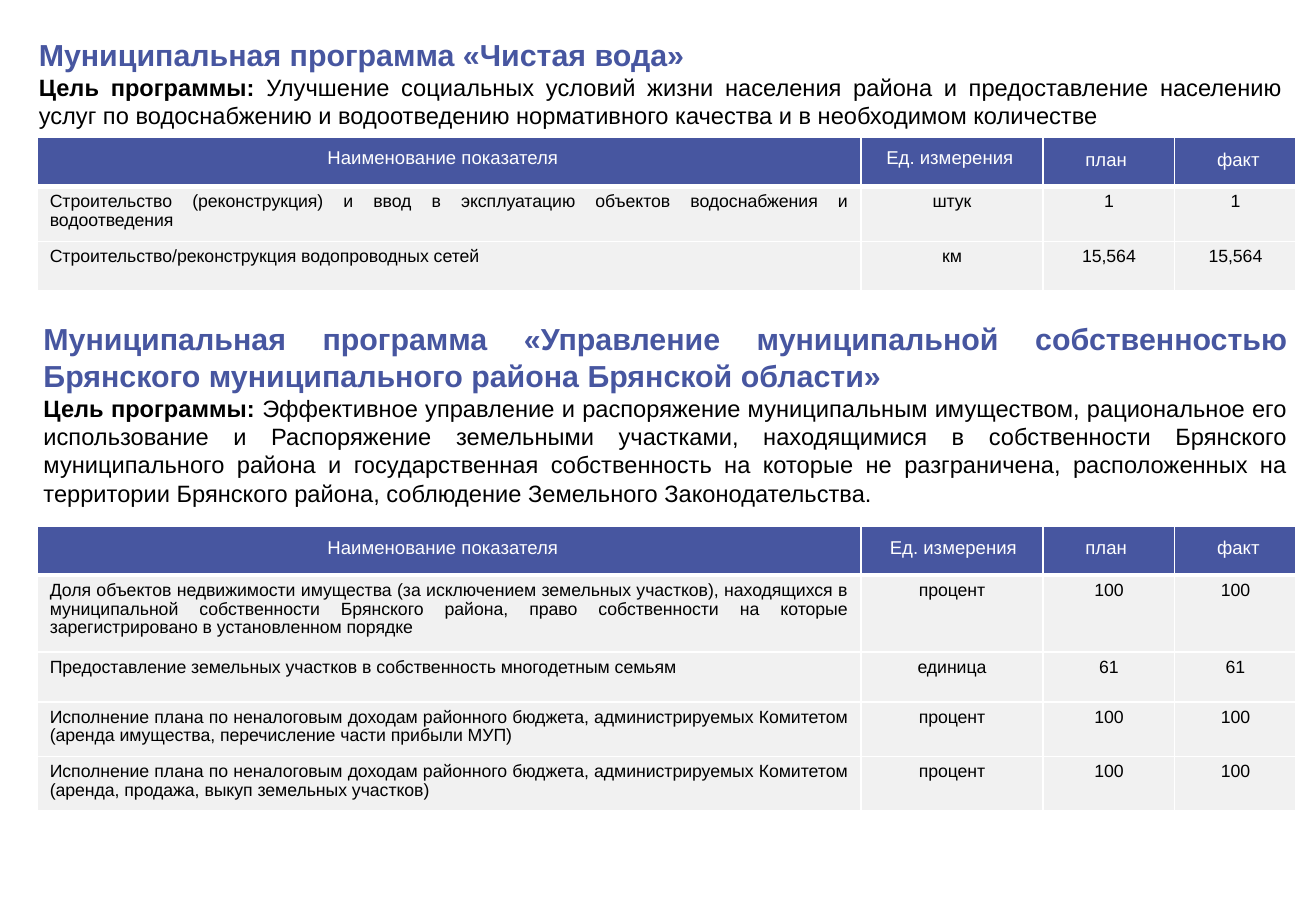
from lxml import etree
from pptx import Presentation
from pptx.dml.color import RGBColor
from pptx.enum.text import MSO_ANCHOR, MSO_AUTO_SIZE, PP_ALIGN
from pptx.oxml.ns import qn
from pptx.util import Pt

JUSTIFY, CENTER = PP_ALIGN.JUSTIFY, PP_ALIGN.CENTER
TOP = MSO_ANCHOR.TOP
NO_AUTOFIT = MSO_AUTO_SIZE.NONE

FONT = "Arial"
COLORS = {"accent": "4756A0", "row": "F1F1F1", "text": "000000", "white": "FFFFFF"}

GOAL_LABEL = "Цель программы: "
# Indicator rows: name, unit, plan, fact, row height.
# Heading labels: text, left, top offset from the table, width.
PROGRAMS = [
    {
        "title": "Муниципальная программа «Чистая вода»",
        "goal": "Улучшение социальных условий жизни населения района и предоставление "
                "населению услуг по водоснабжению и водоотведению нормативного качества "
                "и в необходимом количестве",
        "intro_box": (15.8, 18, 751.7, 63.4),
        "table_top": 81.4,
        "headings": [
            ("Наименование показателя", 185.8, 1.4, 153.4),
            ("Ед. измерения", 517.7, 1.4, 90.7),
            ("план", 635.8, 2.9, 39.6),
            ("факт", 714.2, 2.9, 39.6),
        ],
        "indicators": [
            ("Строительство (реконструкция) и ввод в эксплуатацию объектов "
             "водоснабжения и водоотведения", "штук", "1", "1", 32.4),
            ("Строительство/реконструкция водопроводных сетей",
             "км", "15,564", "15,564", 29.5),
        ],
    },
    {
        "title": "Муниципальная программа «Управление муниципальной собственностью "
                 "Брянского муниципального района Брянской области»",
        "goal": "Эффективное управление и распоряжение муниципальным имуществом, "
                "рациональное его использование и Распоряжение земельными участками, "
                "находящимися в собственности Брянского муниципального района и "
                "государственная собственность на которые не разграничена, расположенных "
                "на территории Брянского района, соблюдение Земельного Законодательства.",
        "intro_box": (18.7, 186.5, 751.7, 118.8),
        "table_top": 312,
        "headings": [
            ("Наименование показателя", 185.8, 1.9, 153.4),
            ("Ед. измерения", 519.8, 1.9, 90.7),
            ("план", 635.8, 1.9, 39.6),
            ("факт", 714.2, 1.9, 39.6),
        ],
        "indicators": [
            ("Доля объектов недвижимости имущества (за исключением земельных участков), "
             "находящихся в муниципальной собственности Брянского района, право "
             "собственности на которые зарегистрировано в установленном порядке",
             "процент", "100", "100", 45.7),
            ("Предоставление земельных участков в собственность многодетным семьям",
             "единица", "61", "61", 29.5),
            ("Исполнение плана по неналоговым доходам районного бюджета, "
             "администрируемых Комитетом (аренда имущества, перечисление части "
             "прибыли МУП)", "процент", "100", "100", 32.4),
            ("Исполнение плана по неналоговым доходам районного бюджета, "
             "администрируемых Комитетом (аренда, продажа, выкуп земельных участков)",
             "процент", "100", "100", 32.4),
        ],
    },
]

TABLE_LEFT = 22.3
COLUMN_WIDTHS = (488, 108, 78, 72)
HEADER_HEIGHT = 28
HEADING_HEIGHT = 20.9


def format_run(run, size, color, bold=False):
    run.font.name = FONT
    run.font.size = Pt(size)
    run.font.bold = bold
    run.font.color.rgb = RGBColor.from_string(COLORS[color])


def fill_intro(box, program):
    """Place the program title and its goal in one justified box."""
    box.left, box.top, box.width, box.height = map(Pt, program["intro_box"])
    frame = box.text_frame
    frame.word_wrap = True
    frame.auto_size = NO_AUTOFIT
    frame.vertical_anchor = TOP
    frame.text = program["title"]
    title = frame.paragraphs[0]
    format_run(title.runs[0], 18, "accent", bold=True)
    goal = frame.add_paragraph()
    for words, bold in ((GOAL_LABEL, True), (program["goal"], False)):
        run = goal.add_run()
        run.text = words
        format_run(run, 14, "text", bold)
    title.alignment = goal.alignment = JUSTIFY


def style_cell(cell, fill, bottom=1, top=1):
    """Give a cell white borders and a plain fill."""
    properties = cell._tc.get_or_add_tcPr()
    for tag, width in (("a:lnL", 1), ("a:lnR", 1), ("a:lnT", top), ("a:lnB", bottom)):
        line = etree.SubElement(properties, qn(tag), w=str(int(Pt(width))))
        solid = etree.SubElement(line, qn("a:solidFill"))
        etree.SubElement(solid, qn("a:srgbClr"), val=COLORS["white"])
    cell.fill.solid()
    cell.fill.fore_color.rgb = RGBColor.from_string(COLORS[fill])


def add_indicators(slide, program):
    indicators = program["indicators"]
    heights = [HEADER_HEIGHT] + [row[-1] for row in indicators]
    table = slide.shapes.add_table(
        len(heights), len(COLUMN_WIDTHS), Pt(TABLE_LEFT), Pt(program["table_top"]),
        Pt(sum(COLUMN_WIDTHS)), Pt(sum(heights))).table
    for column, width in zip(table.columns, COLUMN_WIDTHS):
        column.width = Pt(width)
    for row, height in zip(table.rows, heights):
        row.height = Pt(height)
    for cell in table.rows[0].cells:
        style_cell(cell, "accent", bottom=3)
    for r, (*values, _) in enumerate(indicators, start=1):
        for c, value in enumerate(values):
            cell = table.cell(r, c)
            style_cell(cell, "row", top=3 if r == 1 else 1)
            cell.text_frame.text = value
            paragraph = cell.text_frame.paragraphs[0]
            paragraph.alignment = CENTER if c else JUSTIFY
            paragraph.line_spacing = 0.96
            format_run(paragraph.runs[0], 10.5, "text")


def add_headings(slide, program):
    for label, left, offset, width in program["headings"]:
        box = slide.shapes.add_textbox(
            Pt(left), Pt(program["table_top"] + offset), Pt(width), Pt(HEADING_HEIGHT))
        box.text_frame.word_wrap = False
        box.text_frame.text = label
        paragraph = box.text_frame.paragraphs[0]
        paragraph.alignment = CENTER
        format_run(paragraph.runs[0], 11, "white")


def main():
    deck = Presentation()
    deck.slide_width, deck.slide_height = Pt(780), Pt(540)
    slide = deck.slides.add_slide(deck.slide_layouts[5])
    for number, program in enumerate(PROGRAMS):
        intro = slide.shapes.add_textbox(0, 0, 0, 0) if number else slide.shapes.title
        fill_intro(intro, program)
        add_indicators(slide, program)
        add_headings(slide, program)
    deck.save("out.pptx")


if __name__ == "__main__":
    main()
